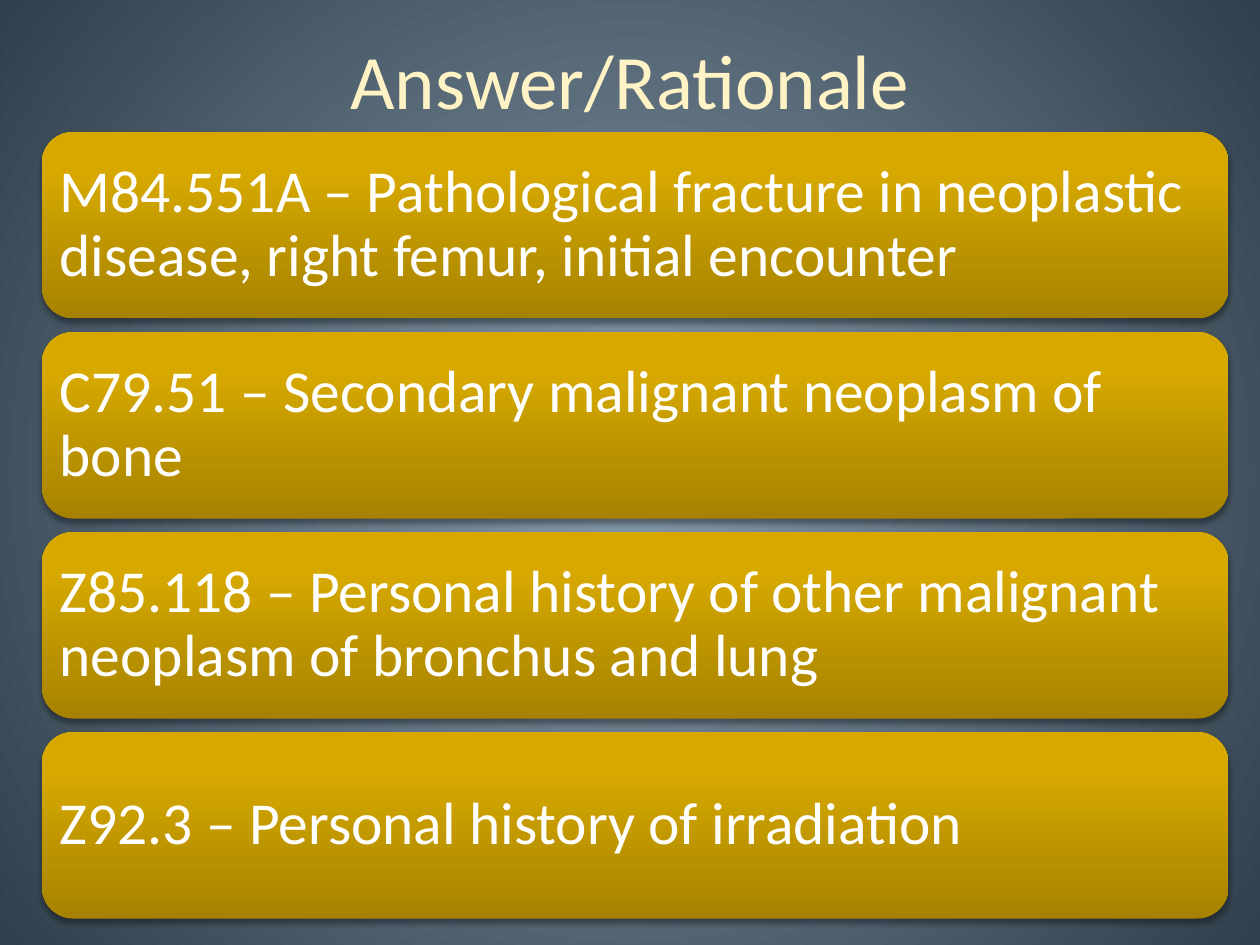
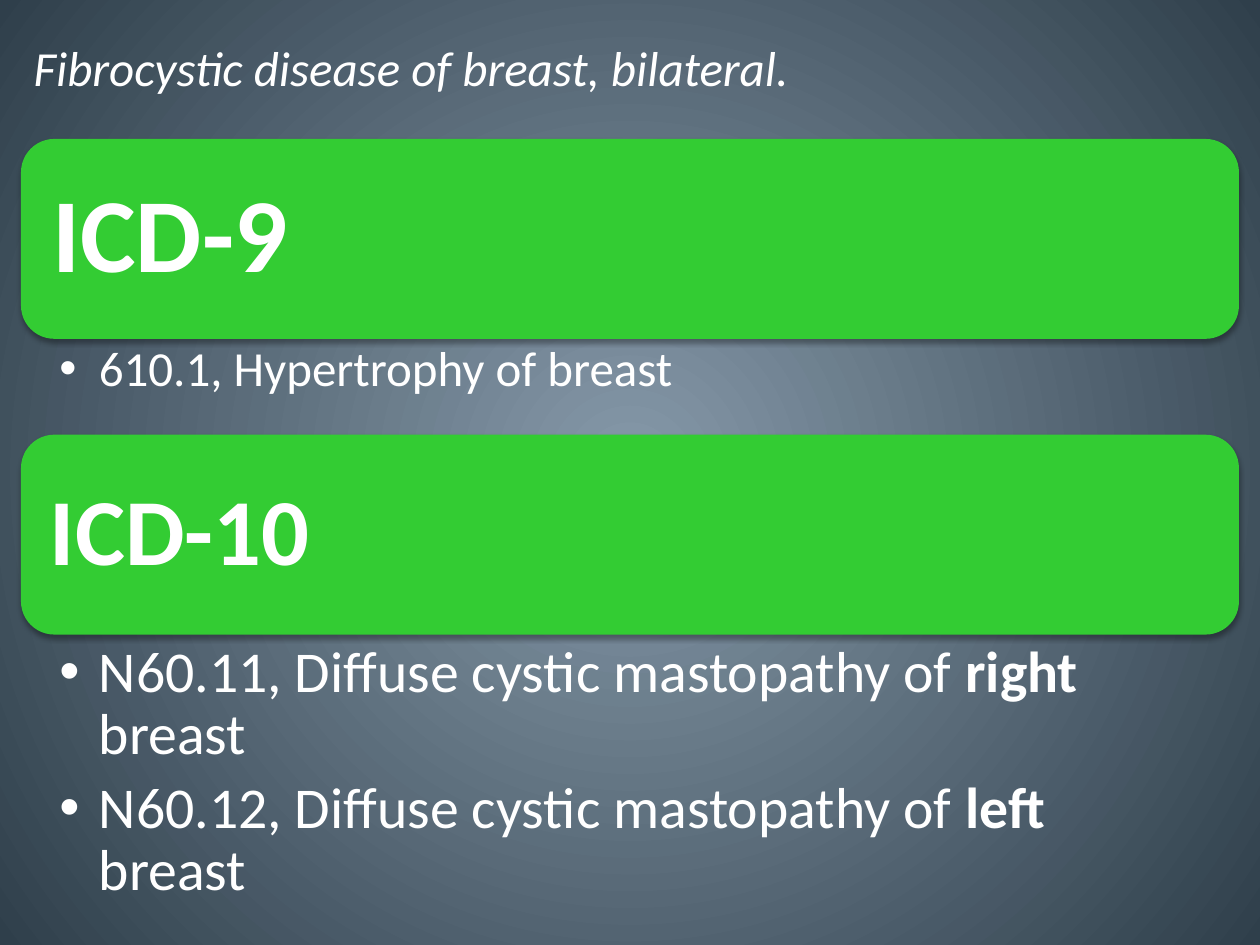
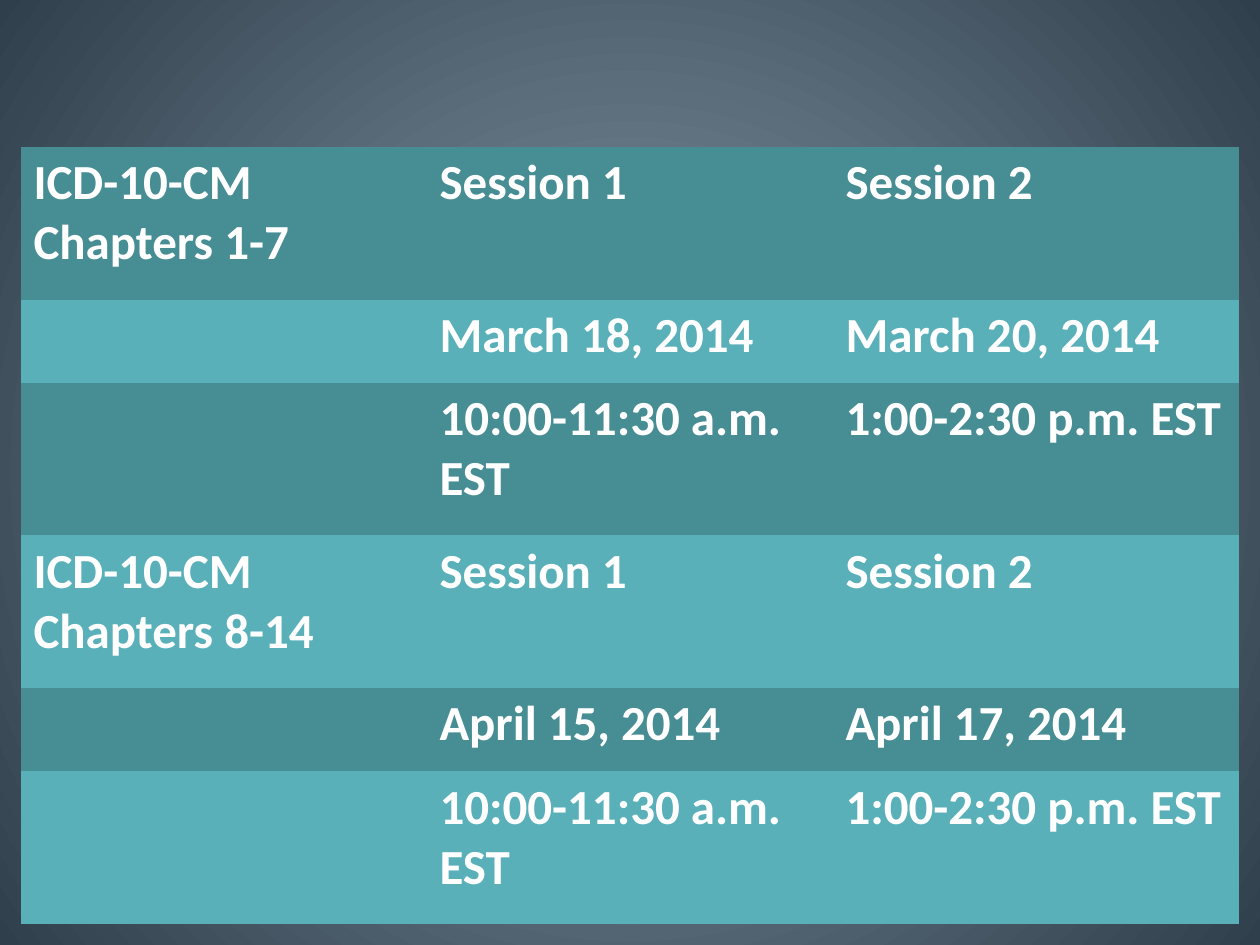
"""Build three slides on ICD coding: a rationale, a code comparison and a session table."""
from dataclasses import dataclass
from typing import Any

from pptx import Presentation
from pptx.dml.color import RGBColor
from pptx.dml.fill import FillFormat
from pptx.enum.shapes import MSO_SHAPE
from pptx.enum.text import MSO_ANCHOR, MSO_AUTO_SIZE, PP_ALIGN
from pptx.oxml import parse_xml
from pptx.oxml.ns import nsdecls, qn
from pptx.presentation import Presentation as Deck
from pptx.slide import Slide
from pptx.text.text import TextFrame, _Paragraph
from pptx.util import Pt

Stops = tuple[tuple[int, str], ...]
Runs = tuple[tuple[str, bool], ...]


@dataclass(frozen=True)
class Theme:
    """Colours, font and type sizes shared by the slides."""
    font: str = "Calibri"
    white: str = "FFFFFF"
    title: str = "FFF3C5"
    green: str = "33CC33"
    rows: tuple[str, str] = ("478D94", "59B0B9")
    backdrop: Stops = ((0, "8699A9"), (100, "2F3F4B"))
    gold: Stops = ((0, "A68200"), (80, "D7A900"), (100, "D8A900"))
    title_size: float = 44
    card_size: float = 34
    text_size: float = 28
    plain_table: str = "{2D5ABB26-0587-4C30-8999-92F81FD0307C}"


@dataclass(frozen=True)
class Box:
    """A place on the slide, in points."""
    left: float
    top: float
    width: float
    height: float

    def lengths(self) -> tuple[Pt, Pt, Pt, Pt]:
        """Return the four lengths for python-pptx."""
        return Pt(self.left), Pt(self.top), Pt(self.width), Pt(self.height)


@dataclass(frozen=True)
class Section:
    """A coding system: its band and the list of codes below it."""
    name: str
    name_size: float
    inset: float
    codes: tuple[Runs, ...]
    code_size: float
    list_height: float
    list_insets: tuple[float, float, float, float]


THEME = Theme()

RATIONALE = (
    "M84.551A – Pathological fracture in neoplastic disease, right femur, initial encounter",
    "C79.51 – Secondary malignant neoplasm of bone",
    "Z85.118 – Personal history of other malignant neoplasm of bronchus and lung",
    "Z92.3 – Personal history of irradiation",
)

SECTIONS = (
    Section("ICD-9", 60, 12.4, ((("610.1, Hypertrophy of breast", False),),),
            28, 54.8, (22, 3, 16, 3)),
    Section("ICD-10", 54, 11, tuple(
        (("N60.1" + digit + ", Diffuse cystic mastopathy of ", False),
         (side, True), (" breast", False))
        for digit, side in (("1", "right"), ("2", "left"))),
            33, 164, (22, 4.5, 24, 4.5)),
)

TIMES = ("", "10:00-11:30 a.m. EST", "1:00-2:30 p.m. EST")
SESSIONS = (
    ("ICD-10-CM Chapters 1-7", "Session 1", "Session 2"),
    ("", "March 18, 2014", "March 20, 2014"),
    TIMES,
    ("ICD-10-CM Chapters 8-14", "Session 1", "Session 2"),
    ("", "April 15, 2014", "April 17, 2014"),
    TIMES,
)


def apply(target: Any, values: dict[str, Any]) -> None:
    """Set every named attribute on the target."""
    for name, value in values.items():
        setattr(target, name, value)


def add_run(p: _Paragraph, text: str, size: float, color: str = THEME.white,
            **values: bool) -> None:
    """Append a formatted run."""
    r = p.add_run()
    r.text = text
    apply(r.font, {"name": THEME.font, "size": Pt(size), **values})
    r.font.color.rgb = RGBColor.from_string(color)


def set_frame(tf: TextFrame, insets: tuple[float, float, float, float],
              anchor: MSO_ANCHOR) -> None:
    """Set wrapping, anchor and insets (left, top, right, bottom)."""
    sides = ("margin_left", "margin_top", "margin_right", "margin_bottom")
    apply(tf, {"word_wrap": True, "auto_size": MSO_AUTO_SIZE.NONE, "vertical_anchor": anchor,
               **{side: Pt(inset) for side, inset in zip(sides, insets)}})


def set_gradient(fill: FillFormat, owner: Any, stops: Stops, shade: str) -> None:
    """Give a fill the colour stops and the shade direction."""
    fill.gradient()
    grad = next(owner.iter(qn("a:gradFill")))
    for child in list(grad):
        grad.remove(child)
    marks = "".join(f'<a:gs pos="{pos * 1000}"><a:srgbClr val="{color}"/></a:gs>'
                    for pos, color in stops)
    for xml in (f'<a:gsLst {nsdecls("a")}>{marks}</a:gsLst>', shade):
        grad.append(parse_xml(xml))


def set_backdrop(prs: Deck) -> None:
    """Put the radial gradient on the slide master."""
    master = prs.slide_master
    shade = (f'<a:path {nsdecls("a")} path="circle">'
             '<a:fillToRect l="50000" t="50000" r="50000" b="50000"/></a:path>')
    set_gradient(master.background.fill, master.element, THEME.backdrop, shade)


def place(sp: Any, box: Box) -> None:
    """Move and size a shape."""
    apply(sp, dict(zip(("left", "top", "width", "height"), box.lengths())))


def add_title(slide: Slide, text: str, box: Box, size: float, color: str,
              align: PP_ALIGN, anchor: MSO_ANCHOR, **values: bool) -> None:
    """Fill and place the title placeholder."""
    sp = slide.shapes.title
    place(sp, box)
    set_frame(sp.text_frame, (7.2, 3.6, 7.2, 3.6), anchor)
    p = sp.text_frame.paragraphs[0]
    p.alignment = align
    add_run(p, text, size, color, **values)


def add_panel(slide: Slide, box: Box, text: str, size: float, inset: float,
              fill: str | Stops, bold: bool = False) -> None:
    """Draw a rounded panel with a soft shadow and left-aligned text."""
    sp = slide.shapes.add_shape(MSO_SHAPE.ROUNDED_RECTANGLE, *box.lengths())
    if isinstance(fill, str):
        sp.fill.solid()
        sp.fill.fore_color.rgb = RGBColor.from_string(fill)
    else:
        shade = f'<a:lin {nsdecls("a")} ang="16200000" scaled="0"/>'
        set_gradient(sp.fill, sp.element.spPr, fill, shade)
    sp.line.fill.background()
    sp.shadow.inherit = False
    sp.element.spPr.find(qn("a:effectLst")).append(parse_xml(
        f'<a:outerShdw {nsdecls("a")} blurRad="{Pt(3.1)}" dist="{Pt(1.8)}" dir="5400000" '
        'rotWithShape="0"><a:srgbClr val="000000"><a:alpha val="35000"/></a:srgbClr>'
        '</a:outerShdw>'))
    set_frame(sp.text_frame, (inset,) * 4, MSO_ANCHOR.MIDDLE)
    p = sp.text_frame.paragraphs[0]
    apply(p, {"alignment": PP_ALIGN.LEFT, "line_spacing": 0.9})
    add_run(p, text, size, bold=bold)


def fill_list(sp: Any, box: Box, section: Section) -> None:
    """Fill a body placeholder with the codes of a section."""
    place(sp, box)
    tf = sp.text_frame
    set_frame(tf, section.list_insets, MSO_ANCHOR.TOP)
    for i, runs in enumerate(section.codes):
        p = tf.add_paragraph() if i else tf.paragraphs[0]
        apply(p, {"line_spacing": 0.9, "space_before": Pt(0),
                  "space_after": Pt(section.code_size * 0.2)})
        apply_indent = p._p.get_or_add_pPr().set
        apply_indent("marL", str(Pt(22.5)))
        apply_indent("indent", str(-Pt(22.5)))
        for text, bold in runs:
            add_run(p, text, section.code_size, bold=bold)


def build_rationale(prs: Deck) -> None:
    """Add the slide of answer cards."""
    slide = prs.slides.add_slide(prs.slide_layouts[5])
    add_title(slide, "Answer/Rationale", Box(36, 0, 648, 90), THEME.title_size, THEME.title,
              PP_ALIGN.CENTER, MSO_ANCHOR.MIDDLE)
    height, gap = 106.5, 7.8
    for i, text in enumerate(RATIONALE):
        box = Box(24, 75.5 + i * (height + gap), 678, height)
        add_panel(slide, box, text, THEME.card_size, 5, THEME.gold)


def build_comparison(prs: Deck) -> None:
    """Add the slide that sets the two coding systems side by side."""
    slide = prs.slides.add_slide(prs.slide_layouts[3])
    add_title(slide, "Fibrocystic disease of breast, bilateral.", Box(12, 18, 672, 41),
              THEME.text_size, THEME.white, PP_ALIGN.LEFT, MSO_ANCHOR.TOP, italic=True)
    left, top, width, height = 12, 79.4, 696, 114.2
    bodies = list(slide.placeholders)[1:3]
    for section, body in zip(SECTIONS, bodies):
        add_panel(slide, Box(left, top, width, height), section.name, section.name_size,
                  section.inset, THEME.green, bold=True)
        top += height
        fill_list(body, Box(left, top, width, section.list_height), section)
        top += section.list_height


def build_sessions(prs: Deck) -> None:
    """Add the slide with the table of sessions."""
    slide = prs.slides.add_slide(prs.slide_layouts[6])
    heights = (87.2, 47.6, 87.2) * 2
    box = Box(12, 84, 696, sum(heights))
    table = slide.shapes.add_table(len(SESSIONS), 3, *box.lengths()).table
    apply(table, {"first_row": False, "horz_banding": False})
    table._tbl.tblPr.find(qn("a:tableStyleId")).text = THEME.plain_table
    for i, (texts, height) in enumerate(zip(SESSIONS, heights)):
        table.rows[i].height = Pt(height)
        for cell, text in zip(table.rows[i].cells, texts):
            cell.fill.solid()
            cell.fill.fore_color.rgb = RGBColor.from_string(THEME.rows[i % 2])
            if text:
                add_run(cell.text_frame.paragraphs[0], text, THEME.text_size, bold=True)


def main() -> None:
    """Build and save the presentation."""
    prs = Presentation()
    apply(prs, {"slide_width": Pt(720), "slide_height": Pt(540)})
    set_backdrop(prs)
    for build in (build_rationale, build_comparison, build_sessions):
        build(prs)
    prs.save("out.pptx")


if __name__ == "__main__":
    main()
